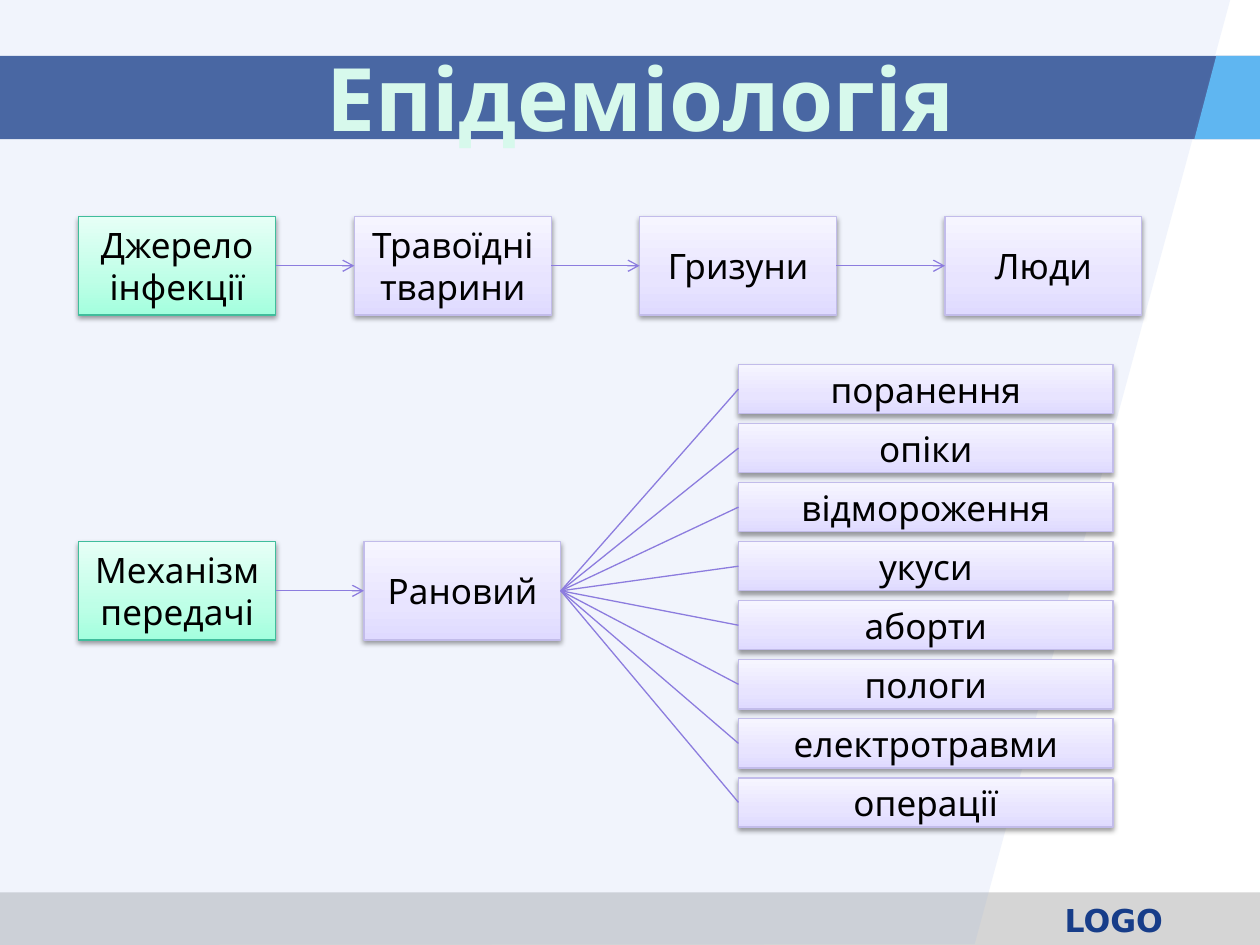
from copy import deepcopy
from lxml.etree import SubElement as Sub
from pptx import Presentation
from pptx.dml.color import RGBColor
from pptx.enum.shapes import MSO_CONNECTOR as Link, MSO_SHAPE as Kind
from pptx.enum.text import MSO_ANCHOR as Anchor, MSO_AUTO_SIZE as Fit, PP_ALIGN as Align
from pptx.oxml.ns import qn
from pptx.util import Pt

rgb = RGBColor.from_string
MINT = ("40BD9C", "A3FFDE", "BEFFE7", "E6FFF6")
LILAC = ("C2BCEA", "DFDAFF", "E8E4FF", "F6F5FF")

deck = Presentation()
deck.slide_width, deck.slide_height = Pt(720), Pt(540)
slide = deck.slides.add_slide(deck.slide_layouts[5])
shapes = slide.shapes


def style(text, words, size, font, color, bold=False):
    text.text = words
    text.word_wrap = True
    text.auto_size = Fit.NONE
    text.vertical_anchor = Anchor.MIDDLE
    par = text.paragraphs[0]
    par.alignment = Align.CENTER
    par.font.size = Pt(size)
    par.font.name = font
    par.font.bold = bold
    par.font.color.rgb = rgb(color)


def node(words, left, top, width, height, look):
    box = shapes.add_shape(Kind.RECTANGLE, Pt(left), Pt(top), Pt(width), Pt(height))
    box.fill.gradient()
    box.fill.gradient_angle = 90
    stops = box._element.spPr.find(".//" + qn("a:gsLst"))
    stops.append(deepcopy(stops[-1]))
    for stop, place, color in zip(box.fill.gradient_stops, (0, 0.35, 1), look[1:]):
        stop.position = place
        stop.color.rgb = rgb(color)
    box.line.color.rgb = rgb(look[0])
    box.line.width = Pt(0.75)
    box.shadow.inherit = False
    effect = box._element.spPr.find(qn("a:effectLst"))
    shade = Sub(effect, qn("a:outerShdw"), blurRad=str(Pt(3.1)), dist=str(Pt(1.6)),
                dir="5400000", rotWithShape="0")
    black = Sub(shade, qn("a:srgbClr"), val="000000")
    Sub(black, qn("a:alpha"), val="38000")
    style(box.text_frame, words, 20, "Karla", "000000")
    return box


bands = [
    ([(0, 510), (720, 510), (720, 540), (0, 540)], "969696", 40),
    ([(0, 0), (703, 0), (557, 539.5), (0, 540)], "94B1EC", 13),
    ([(0, 32), (720, 32), (720, 79.5), (0, 79.5)], "173D89", 77),
    ([(695, 32), (682.5, 79.5), (720, 79.5), (720, 32)], "5FB6F1", 100),
]
for points, color, alpha in bands:
    start, *rest = [(Pt(x), Pt(y)) for x, y in points]
    if len({x for x, y in points}) == 2:
        (left, top), (right, low) = start, rest[1]
        band = shapes.add_shape(Kind.RECTANGLE, left, top, right - left, low - top)
    else:
        pen = shapes.build_freeform(*start)
        pen.add_line_segments(rest, close=True)
        band = pen.convert_to_shape()
    band.fill.solid()
    band.fill.fore_color.rgb = rgb(color)
    tint = band._element.spPr.find(".//" + qn("a:srgbClr"))
    Sub(tint, qn("a:alpha"), val=str(alpha * 1000))
    band.line.fill.background()
    band.shadow.inherit = False

logo = shapes.add_textbox(Pt(594), Pt(511), Pt(85), Pt(29))
style(logo.text_frame, "LOGO", 18, "DejaVu Sans", "173D89", True)

title = shapes.title
title.left, title.top, title.width, title.height = Pt(42), Pt(32.5), Pt(648), Pt(45)
style(title.text_frame, "Епідеміологія", 50, "Karla", "D7F9EC", True)
shapes._spTree.append(title._element)

rows = [
    (123.75, [("Джерело інфекції", 45), ("Травоїдні тварини", 202.5),
              ("Гризуни", 365.5), ("Люди", 540)]),
    (309.5, [("Механізм передачі", 45), ("Рановий", 208)]),
]
links = []
for top, items in rows:
    chain = [node(words, left, top, 112.5, 56.25, LILAC if i else MINT)
             for i, (words, left) in enumerate(items)]
    links += [(a, b, True) for a, b in zip(chain, chain[1:])]

hub = chain[-1]
causes = ["поранення", "опіки", "відмороження", "укуси",
          "аборти", "пологи", "електротравми", "операції"]
for i, cause in enumerate(causes):
    box = node(cause, 422, 208.25 + 33.75 * i, 214, 28.1, LILAC)
    links.append((hub, box, False))

for a, b, arrow in links:
    line = shapes.add_connector(Link.STRAIGHT, 0, 0, 0, 0)
    line.begin_connect(a, 3)
    line.end_connect(b, 1)
    line.line.color.rgb = rgb("8C7CDE")
    line.line.width = Pt(0.75)
    if arrow:
        Sub(line.line._get_or_add_ln(), qn("a:tailEnd"), type="arrow")
    Sub(line._element.spPr, qn("a:effectLst"))

deck.save("out.pptx")
